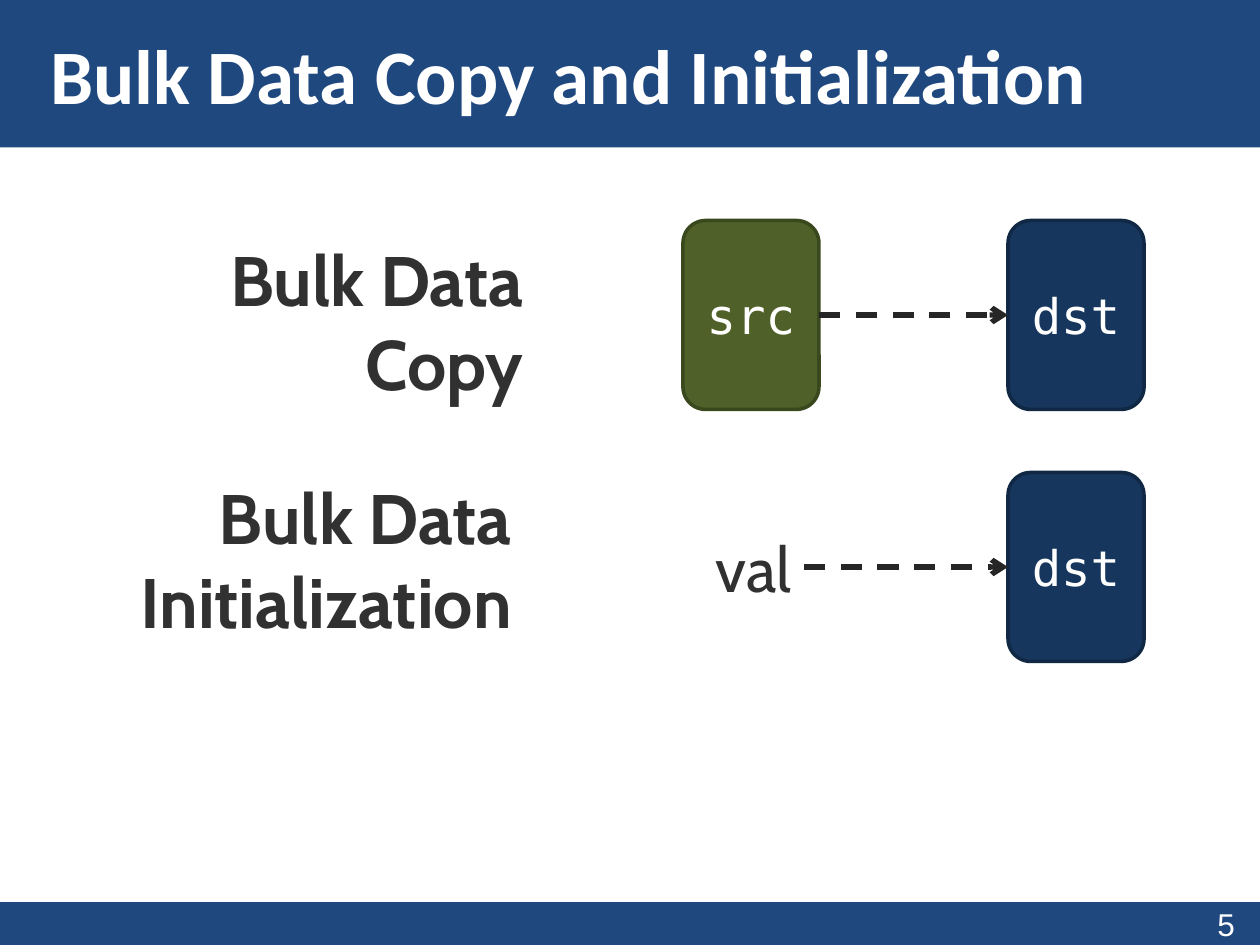
from lxml import etree
from pptx import Presentation
from pptx.dml.color import RGBColor
from pptx.enum.dml import MSO_LINE
from pptx.enum.shapes import MSO_CONNECTOR, MSO_SHAPE
from pptx.enum.text import MSO_ANCHOR, PP_ALIGN
from pptx.oxml.ns import qn
from pptx.util import Inches, Pt

RECTANGLE, ROUNDED = MSO_SHAPE.RECTANGLE, MSO_SHAPE.ROUNDED_RECTANGLE
STRAIGHT, DASH = MSO_CONNECTOR.STRAIGHT, MSO_LINE.DASH
TOP, MIDDLE = MSO_ANCHOR.TOP, MSO_ANCHOR.MIDDLE
LEFT, CENTER, RIGHT = PP_ALIGN.LEFT, PP_ALIGN.CENTER, PP_ALIGN.RIGHT

COLORS = {
    "band": "1F487F", "white": "FFFFFF", "text": "313131", "arrow": "262626",
    "source": "4F6128", "source_line": "3A481E",
    "target": "17365D", "target_line": "112845",
}
BODY_FONT, CODE_FONT = "Cabin", "DejaVu Sans Mono"


def color(name):
    return RGBColor.from_string(COLORS[name])


def write(shape, text, *, size, font=BODY_FONT, fill="text", bold=False,
          align=LEFT, anchor=TOP, wrap=True, left=0.1, right=0.1):
    frame = shape.text_frame
    frame.word_wrap = wrap
    frame.vertical_anchor = anchor
    frame.margin_left, frame.margin_right = Inches(left), Inches(right)
    paragraph = frame.paragraphs[0]
    paragraph.alignment = align
    run = paragraph.add_run()
    run.text = text
    run.font.name, run.font.size, run.font.bold = font, Pt(size), bold
    run.font.color.rgb = color(fill)


class SlideBuilder:
    box_width, box_height = 1.08, 1.5
    outline, arrow_width = 2, 3

    def __init__(self, slide):
        self.slide = slide

    def block(self, kind, x, y, width, height, fill, line=None):
        shape = self.slide.shapes.add_shape(
            kind, Inches(x), Inches(y), Inches(width), Inches(height))
        shape.shadow.inherit = False
        shape.fill.solid()
        shape.fill.fore_color.rgb = color(fill)
        if line:
            shape.line.color.rgb = color(line)
            shape.line.width = Pt(self.outline)
        else:
            shape.line.fill.background()
        return shape

    def label(self, text, x, y, width, height, **style):
        box = self.slide.shapes.add_textbox(
            Inches(x), Inches(y), Inches(width), Inches(height))
        write(box, text, **style)

    def memory_box(self, text, x, center_y, role):
        shape = self.block(ROUNDED, x, center_y - self.box_height / 2,
                           self.box_width, self.box_height, role, f"{role}_line")
        write(shape, text, size=28, font=CODE_FONT, fill="white",
              align=CENTER, anchor=MIDDLE)

    def arrow(self, start, end, y):
        connector = self.slide.shapes.add_connector(
            STRAIGHT, Inches(start), Inches(y), Inches(end), Inches(y))
        connector.line.color.rgb = color("arrow")
        connector.line.width = Pt(self.arrow_width)
        connector.line.dash_style = DASH
        etree.SubElement(connector.line._get_or_add_ln(), qn("a:tailEnd"), type="arrow")
        etree.SubElement(connector._element.spPr, qn("a:effectLst"))


def main():
    presentation = Presentation()
    presentation.slide_width, presentation.slide_height = Inches(10), Inches(7.5)
    slide = presentation.slides.add_slide(presentation.slide_layouts[6])
    builder = SlideBuilder(slide)

    # Footer band and page number
    builder.block(RECTANGLE, 0, 7.17, 10, 0.33, "band", "band")
    builder.label("5", 7.67, 7.13, 2.33, 0.33, size=18, font="Arial",
                  fill="white", align=RIGHT, right=0.2)

    # Title band
    title = builder.block(RECTANGLE, 0, 0, 10, 1.17, "band")
    write(title, "Bulk Data Copy and Initialization", size=44, font="Calibri",
          fill="white", bold=True, anchor=MIDDLE, left=0.4)

    # Operation names
    heading = {"size": 40, "bold": True, "align": RIGHT}
    builder.label("Bulk Data Copy", 0.58, 1.83, 3.67, 1.45, **heading)
    builder.label("Bulk Data Initialization", 0.33, 3.72, 3.83, 1.45, **heading)

    # Source and value, each with an arrow to its destination
    copy_y, initialization_y, target_x = 2.5, 4.5, 8
    builder.memory_box("src", 5.42, copy_y, "source")
    builder.label("val", 5.58, 4.15, 0.8, 0.71, size=36, wrap=False)
    for start, y in ((6.5, copy_y), (6.38, initialization_y)):
        builder.memory_box("dst", target_x, y, "target")
        builder.arrow(start, target_x, y)

    presentation.save("out.pptx")


if __name__ == "__main__":
    main()
